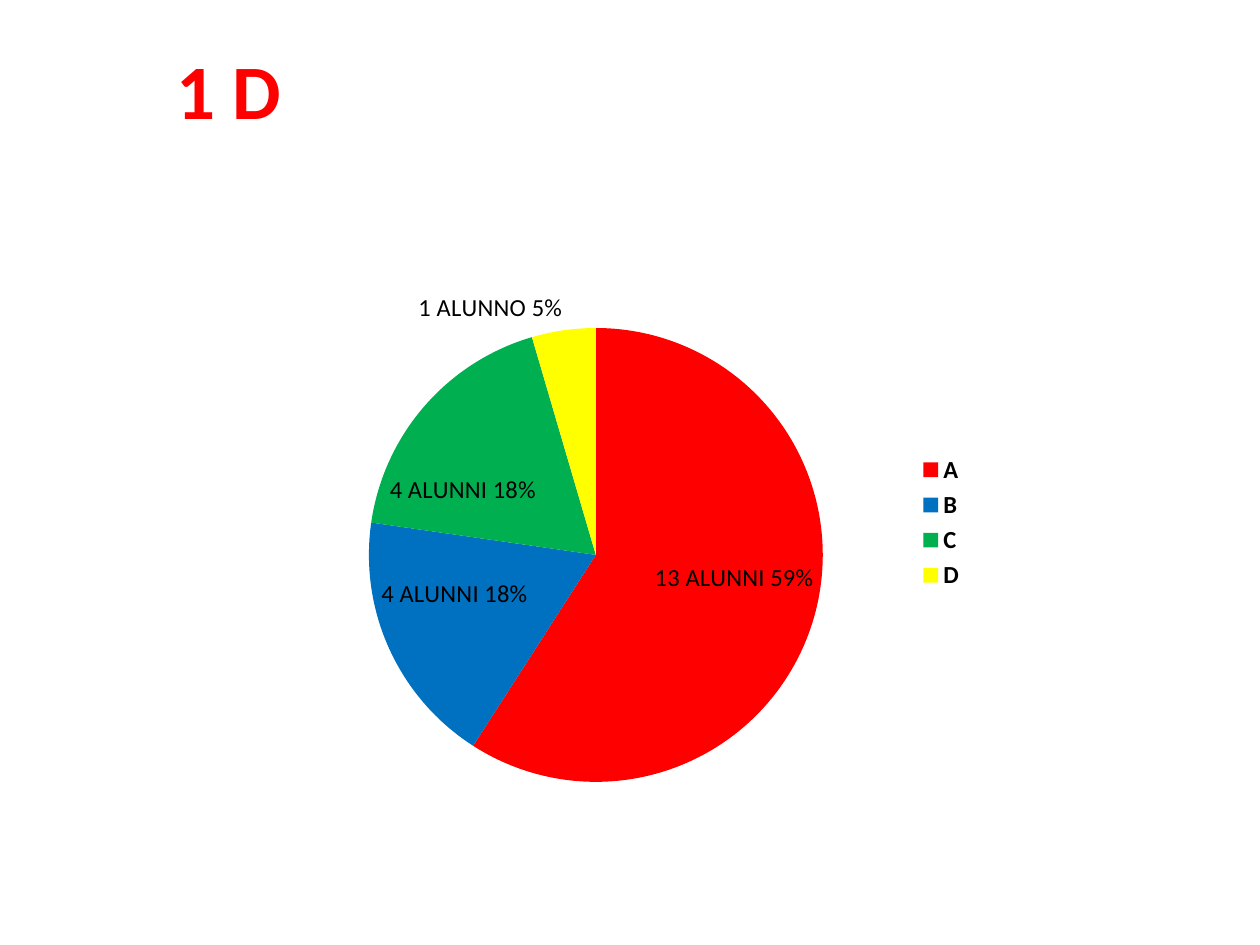
"""Build the class 1 D results slide with its pie chart of pupils."""

from typing import NamedTuple

import lxml.etree
import pptx
import pptx.chart.data
import pptx.dml.color
import pptx.enum.chart
import pptx.enum.text
import pptx.oxml
import pptx.oxml.ns
import pptx.util

FONT = "Calibri"
RED = pptx.dml.color.RGBColor(0xFF, 0x00, 0x00)
BLUE = pptx.dml.color.RGBColor(0x00, 0x70, 0xC0)
GREEN = pptx.dml.color.RGBColor(0x00, 0xB0, 0x50)
YELLOW = pptx.dml.color.RGBColor(0xFF, 0xFF, 0x00)
BLACK = pptx.dml.color.RGBColor(0x00, 0x00, 0x00)
SLIDE_WIDTH = pptx.util.Inches(10)
SLIDE_HEIGHT = pptx.util.Inches(7.5)


class Area(NamedTuple):
    """A rectangle given as shares of its container."""

    left: float
    top: float
    width: float
    height: float

    def on_slide(self) -> tuple[int, int, int, int]:
        """Return the rectangle in slide units."""
        return (
            int(self.left * SLIDE_WIDTH),
            int(self.top * SLIDE_HEIGHT),
            int(self.width * SLIDE_WIDTH),
            int(self.height * SLIDE_HEIGHT),
        )


class Grade(NamedTuple):
    """A grade band with its pupils, label and colour."""

    name: str
    pupils: int
    label: str
    color: pptx.dml.color.RGBColor


TITLE_AREA = Area(0.083, 0.039, 0.197, 0.112)
CHART_AREA = Area(0.146, 0.259, 0.63, 0.588)
PIE_AREA = Area(0.233, 0.15, 0.572, 0.817)
GRADES = (
    Grade("A", 13, "13 ALUNNI 59%", RED),
    Grade("B", 4, "4 ALUNNI 18%", BLUE),
    Grade("C", 4, "4 ALUNNI 18%", GREEN),
    Grade("D", 1, "1 ALUNNO 5%", YELLOW),
)


def style_font(font, size: float, bold: bool, color: pptx.dml.color.RGBColor) -> None:
    """Set the face, size, weight and colour of a font."""
    font.name = FONT
    font.size = pptx.util.Pt(size)
    font.bold = bold
    font.color.rgb = color


def add_title(slide, text: str) -> None:
    """Add the class name as a centred title."""
    text_frame = slide.shapes.add_textbox(*TITLE_AREA.on_slide()).text_frame
    text_frame.word_wrap = True
    paragraph = text_frame.paragraphs[0]
    paragraph.alignment = pptx.enum.text.PP_ALIGN.CENTER
    run = paragraph.add_run()
    run.text = text
    style_font(run.font, 44, True, RED)


def place_plot(chart, area: Area) -> None:
    """Fix the inner plot area as shares of the chart."""
    plot_area = chart.plots[0]._element.getparent()
    for old_layout in plot_area.findall(pptx.oxml.ns.qn("c:layout")):
        plot_area.remove(old_layout)
    layout = lxml.etree.Element(pptx.oxml.ns.qn("c:layout"))
    manual = lxml.etree.SubElement(layout, pptx.oxml.ns.qn("c:manualLayout"))
    settings = {
        "layoutTarget": "inner",
        "xMode": "edge",
        "yMode": "edge",
        "x": area.left,
        "y": area.top,
        "w": area.width,
        "h": area.height,
    }
    for name, value in settings.items():
        setting = lxml.etree.SubElement(manual, pptx.oxml.ns.qn(f"c:{name}"))
        setting.set("val", str(value))
    plot_area.insert(0, layout)


def style_slice(point, grade: Grade) -> None:
    """Colour one slice and write its label."""
    point.format.fill.solid()
    point.format.fill.fore_color.rgb = grade.color
    label = point.data_label
    run = label.text_frame.paragraphs[0].add_run()
    run.text = grade.label
    style_font(run.font, 14, False, BLACK)
    label.position = pptx.enum.chart.XL_LABEL_POSITION.BEST_FIT


def add_pie(slide, grades: tuple[Grade, ...]) -> None:
    """Add the pie chart of pupils by grade."""
    chart_data = pptx.chart.data.CategoryChartData()
    chart_data.categories = [grade.name for grade in grades]
    chart_data.add_series("Series 1", [grade.pupils for grade in grades])
    chart = slide.shapes.add_chart(
        pptx.enum.chart.XL_CHART_TYPE.PIE, *CHART_AREA.on_slide(), chart_data
    ).chart
    chart.has_title = False
    style_font(chart.font, 10, False, BLACK)
    chart.has_legend = True
    chart.legend.position = pptx.enum.chart.XL_LEGEND_POSITION.RIGHT
    chart.legend.include_in_layout = False
    style_font(chart.legend.font, 14, True, BLACK)
    plot = chart.plots[0]
    plot.vary_by_categories = True
    series = plot.series[0]
    labels = series.data_labels
    labels.show_value = True
    labels.show_percentage = True
    labels.position = pptx.enum.chart.XL_LABEL_POSITION.BEST_FIT
    style_font(labels.font, 14, True, BLACK)
    for index, grade in enumerate(grades):
        style_slice(series.points[index], grade)
    place_plot(chart, PIE_AREA)


def main() -> None:
    """Build and save the presentation."""
    presentation = pptx.Presentation()
    presentation.slide_width = SLIDE_WIDTH
    presentation.slide_height = SLIDE_HEIGHT
    slide = presentation.slides.add_slide(presentation.slide_layouts[6])
    add_title(slide, "1 D")
    add_pie(slide, GRADES)
    presentation.save("out.pptx")


if __name__ == "__main__":
    main()
